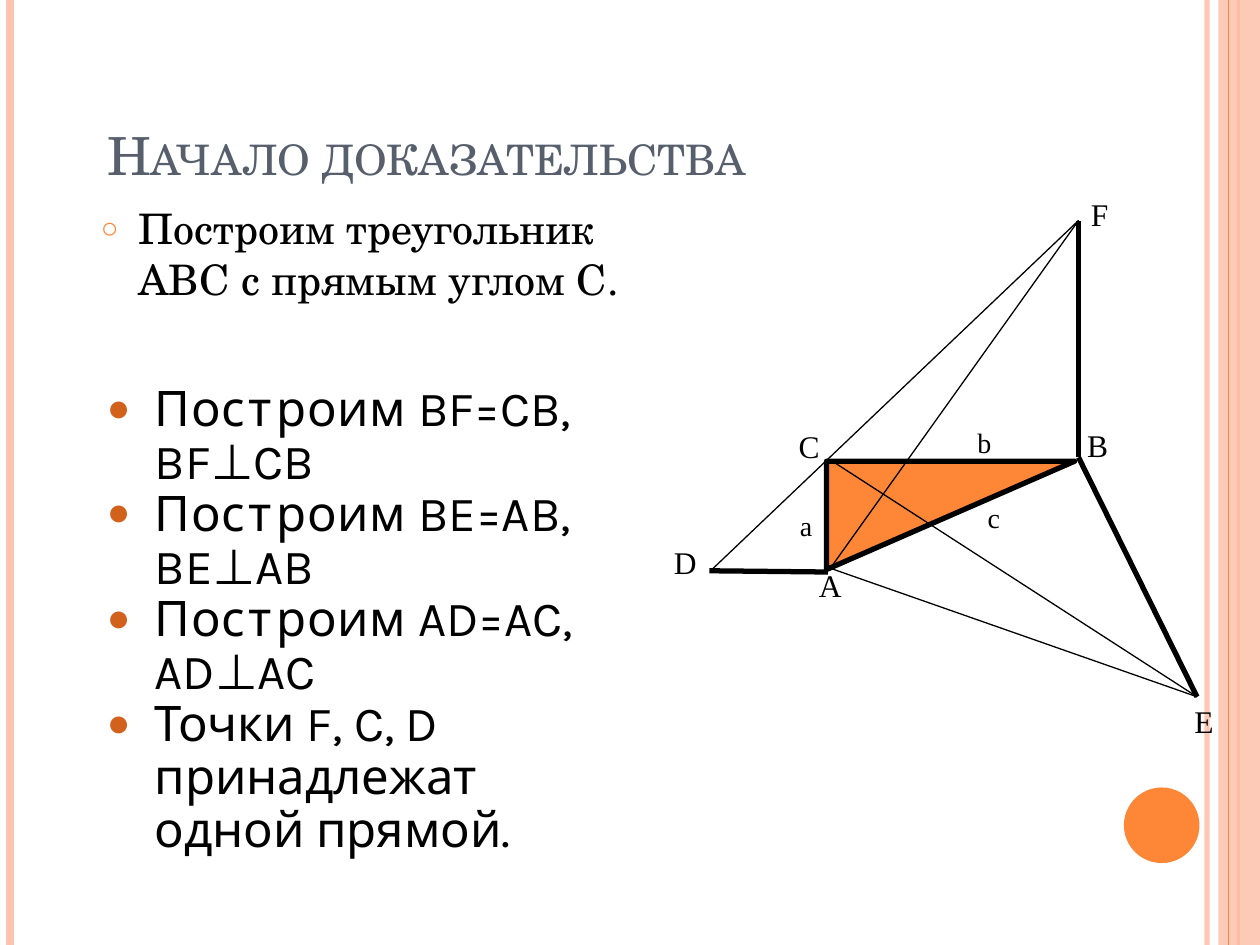
from lxml import etree
from pptx import Presentation
from pptx.dml.color import RGBColor
from pptx.enum.shapes import MSO_CONNECTOR, MSO_SHAPE
from pptx.enum.text import MSO_ANCHOR, MSO_AUTO_SIZE, PP_ALIGN
from pptx.oxml.ns import qn
from pptx.util import Pt

STRAIGHT = MSO_CONNECTOR.STRAIGHT
RECTANGLE, OVAL = MSO_SHAPE.RECTANGLE, MSO_SHAPE.OVAL
RIGHT_TRIANGLE = MSO_SHAPE.RIGHT_TRIANGLE
TOP, BOTTOM = MSO_ANCHOR.TOP, MSO_ANCHOR.BOTTOM
NO_AUTOFIT = MSO_AUTO_SIZE.NONE
LEFT = PP_ALIGN.LEFT

PX = 9144  # 100 px to the inch
WIDTH, HEIGHT = 1000, 750
COLORS = {"orange": "FE8637", "peach": "FEC3AE", "bullet": "D2611C",
          "title": "575F6D", "black": "000000"}
SERIF, SANS, LABEL_FONT = "TeX Gyre Schola", "Karla", "Times New Roman"


def emu(*lengths):
    return [length * PX for length in lengths]


def rgb(name):
    return RGBColor.from_string(COLORS[name])


def set_opacity(element, percent):
    """Make the solid colour inside an element partly transparent."""
    color = next(element.iter(qn("a:srgbClr")))
    etree.SubElement(color, qn("a:alpha")).set("val", str(percent * 1000))


def add_line(slide, start, end, color, weight):
    line = slide.shapes.add_connector(STRAIGHT, *emu(*start, *end))
    line.line.color.rgb = rgb(color)
    line.line.width = Pt(weight)
    etree.SubElement(line._element.spPr, qn("a:effectLst"))
    return line


def add_filled(slide, kind, box, color):
    shape = slide.shapes.add_shape(kind, *emu(*box))
    shape.shadow.inherit = False
    shape.fill.solid()
    shape.fill.fore_color.rgb = rgb(color)
    shape.line.fill.background()
    return shape


def style_runs(paragraph, font, size, color):
    for run in paragraph.runs:
        run.font.name = font
        run.font.size = Pt(size)
        run.font.color.rgb = rgb(color)


def set_bullet(paragraph, char, color, percent, indent):
    properties = paragraph._p.get_or_add_pPr()
    properties.set("marL", str(indent * PX))
    properties.set("indent", str(-indent * PX))
    bullet_color = etree.SubElement(properties, qn("a:buClr"))
    etree.SubElement(bullet_color, qn("a:srgbClr")).set("val", COLORS[color])
    etree.SubElement(properties, qn("a:buSzPct")).set("val", str(percent * 1000))
    etree.SubElement(properties, qn("a:buFont")).set("typeface", "Arial")
    etree.SubElement(properties, qn("a:buChar")).set("char", char)


def fill_placeholder(placeholder, box, text, anchor):
    placeholder.left, placeholder.top, placeholder.width, placeholder.height = emu(*box)
    frame = placeholder.text_frame
    frame.text = text
    frame.auto_size = NO_AUTOFIT
    frame.vertical_anchor = anchor
    paragraph = frame.paragraphs[0]
    paragraph.alignment = LEFT
    paragraph.space_before = Pt(0)
    return paragraph


def add_text(slide, box, text):
    frame = slide.shapes.add_textbox(*emu(*box)).text_frame
    frame.word_wrap = True
    frame.text = text
    return frame.paragraphs[0]


def add_frame(slide, width, height):
    """Draw the vertical rails, the side band and the corner disc."""
    def rail(x, color, weight):
        return add_line(slide, (x, 0), (x, height), color, weight)

    inner_rail = rail(width - 42, "peach", 3)
    set_opacity(inner_rail._element, 93)
    rail(8, "peach", 4.5)
    rail(width - 17, "orange", 1.5)
    band = add_filled(slide, RECTANGLE, (width - 33, 0, 33, height), "peach")
    set_opacity(band._element.spPr, 87)
    rail(width - 25, "orange", 0.75)
    add_filled(slide, OVAL, (width - 108, height - 125, 60, 60), "orange")


def add_heading(slide, box):
    heading = fill_placeholder(slide.shapes.title, box, "Начало доказательства", BOTTOM)
    style_runs(heading, SERIF, 30, "title")
    for run in heading.runs:
        run._r.get_or_add_rPr().set("cap", "small")


def add_premise(slide, box):
    premise = fill_placeholder(slide.placeholders[1], box,
                               "Построим треугольник ABC с прямым углом С.", TOP)
    set_bullet(premise, "○", "orange", 70, 30)
    style_runs(premise, SERIF, 24, "black")


def add_steps(slide, left, top, width):
    steps = [
        ("Построим BF=CB, BF⊥CB", 0, 117),
        ("Построим BE=AB, BE⊥AB", 83, 100),
        ("Построим AD=AC, AD⊥AC", 167, 92),
        ("Точки F, C, D принадлежат одной прямой.", 250, 142),
    ]
    for text, offset, height in steps:
        step = add_text(slide, (left, top + offset, width, height), text)
        set_bullet(step, "●", "bullet", 80, 38)
        step.line_spacing = 0.9
        style_runs(step, SANS, 28, "black")


def add_construction(slide, left, top):
    """Draw triangle ABC with the perpendiculars BF, BE and AD."""
    def at(point):
        return left + point[0], top + point[1]

    points = {"A": (134, 301), "B": (331, 213), "C": (134, 215),
              "D": (39, 303), "E": (975 - 525, 403), "F": (331, 25)}
    points["E"] = (425, 403)

    triangle = add_filled(slide, RIGHT_TRIANGLE, (*at((131, 216)), 197, 86), "orange")
    triangle.line.color.rgb = rgb("black")
    triangle.line.width = Pt(3)
    triangle.rotation = 180
    triangle._element.spPr.xfrm.set("flipH", "1")

    for start, end in (("B", "F"), ("B", "E")):
        add_line(slide, at(points[start]), at(points[end]), "black", 3)
    add_line(slide, at((132, 304)), at((38, 303)), "black", 3)
    for start, end in ("EC", "EA", "FD", "FA"):
        add_line(slide, at(points[start]), at(points[end]), "black", 0.75)

    labels = [
        ("A", 115, 294, 55, 18), ("B", 328, 183, 63, 18), ("C", 99, 184, 71, 18),
        ("D", 0, 276, 55, 18), ("E", 413, 402, 62, 18), ("F", 331, 0, 63, 18),
        ("a", 100, 249, 47, 16), ("b", 241, 183, 47, 16), ("c", 249, 242, 39, 16),
    ]
    for name, x, y, width, size in labels:
        label = add_text(slide, (*at((x, y)), width, 40 if size == 18 else 37), name)
        style_runs(label, LABEL_FONT, size, "black")


def main():
    presentation = Presentation()
    presentation.slide_width, presentation.slide_height = emu(WIDTH, HEIGHT)
    slide = presentation.slides.add_slide(presentation.slide_layouts[1])
    add_frame(slide, WIDTH, HEIGHT)
    add_heading(slide, (75, 28, 850, 125))
    add_premise(slide, (70, 156, 467, 192))
    add_construction(slide, 525, 150)
    add_steps(slide, 75, 300, 425)
    presentation.save("out.pptx")


if __name__ == "__main__":
    main()
